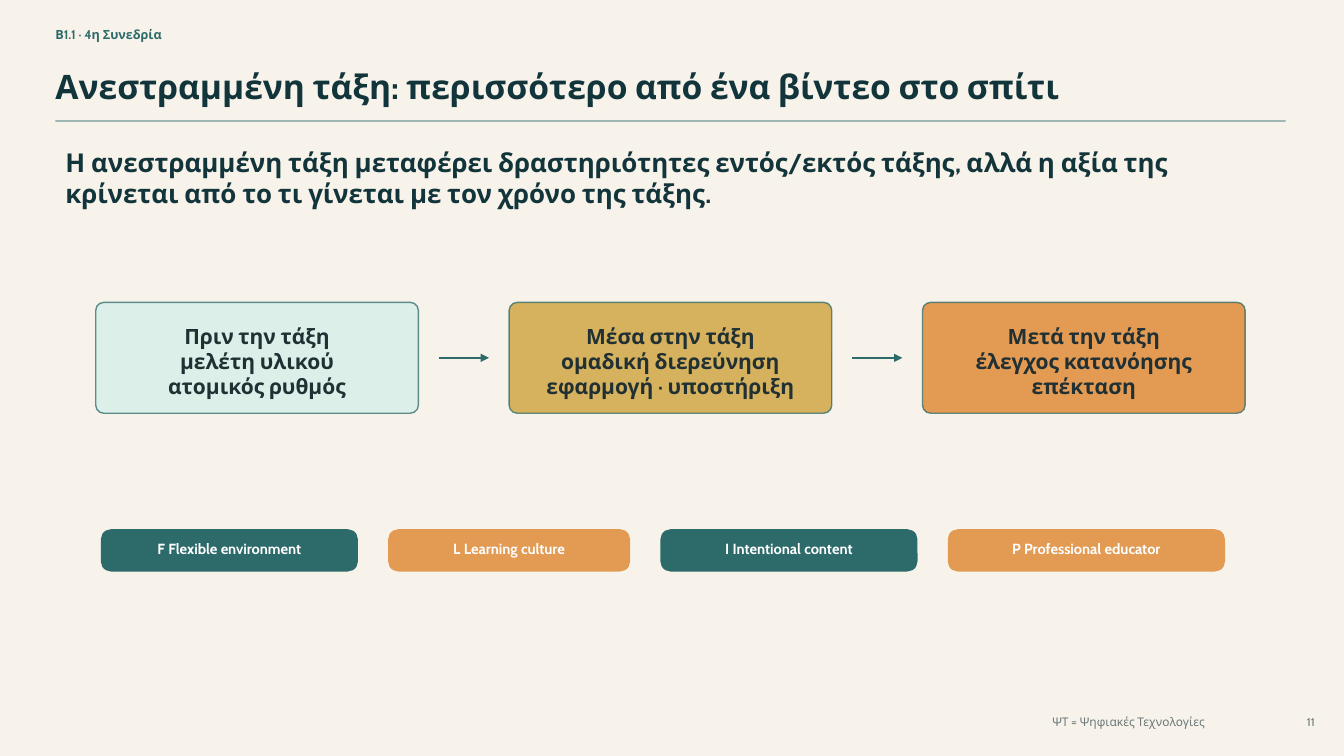
from lxml import etree
from pptx import Presentation
from pptx.dml.color import RGBColor
from pptx.enum.shapes import MSO_CONNECTOR, MSO_SHAPE
from pptx.enum.text import MSO_ANCHOR, MSO_AUTO_SIZE, PP_ALIGN
from pptx.oxml.ns import qn
from pptx.util import Inches, Pt

ROUNDED = MSO_SHAPE.ROUNDED_RECTANGLE
STRAIGHT = MSO_CONNECTOR.STRAIGHT
MIDDLE = MSO_ANCHOR.MIDDLE
NO_AUTOFIT = MSO_AUTO_SIZE.NONE
LEFT, CENTER, RIGHT = PP_ALIGN.LEFT, PP_ALIGN.CENTER, PP_ALIGN.RIGHT
TITLE_ONLY = 5

FONT = "Cabin"
COLORS = {
    "paper": "F7F3EA",
    "teal": "2D6A6A",
    "navy": "12343B",
    "ink": "203033",
    "gray": "6B7779",
    "mint": "DCEFE9",
    "gold": "D6B15E",
    "orange": "E39A53",
    "white": "FFFFFF",
}

HEADER_LEFT, HEADER_WIDTH = 0.55, 12.2

PHASES = [
    ("mint", ["Πριν την τάξη", "μελέτη υλικού", "ατομικός ρυθμός"]),
    ("gold", ["Μέσα στην τάξη", "ομαδική διερεύνηση", "εφαρμογή · υποστήριξη"]),
    ("orange", ["Μετά την τάξη", "έλεγχος κατανόησης", "επέκταση"]),
]
PHASE_LEFT, PHASE_TOP, PHASE_WIDTH, PHASE_HEIGHT = 0.95, 3, 3.2, 1.1
PHASE_GAP, ARROW_MARGIN = 0.9, 0.2

PILLARS = [
    ("teal", 2.55, "F Flexible environment"),
    ("orange", 2.4, "L Learning culture"),
    ("teal", 2.55, "I Intentional content"),
    ("orange", 2.75, "P Professional educator"),
]
PILLAR_LEFT, PILLAR_TOP, PILLAR_HEIGHT, PILLAR_GAP = 1, 5.25, 0.42, 0.3


def color(name):
    return RGBColor.from_string(COLORS[name])


def write(shape, lines, size, color_name, bold=True, align=LEFT, insets=(0, 0, 0, 0)):
    """Fill a shape with one paragraph per line; insets are left, top, right, bottom."""
    frame = shape.text_frame
    frame.word_wrap = True
    frame.auto_size = NO_AUTOFIT
    frame.vertical_anchor = MIDDLE
    (frame.margin_left, frame.margin_top,
     frame.margin_right, frame.margin_bottom) = map(Inches, insets)
    frame.text = "\n".join(lines)
    for paragraph in frame.paragraphs:
        paragraph.alignment = align
        paragraph.font.name = FONT
        paragraph.font.size = Pt(size)
        paragraph.font.bold = bold
        paragraph.font.color.rgb = color(color_name)


def add_text(slide, box, text, size, color_name, bold=True, align=LEFT):
    shape = slide.shapes.add_textbox(*map(Inches, box))
    write(shape, [text], size, color_name, bold, align)


def add_title(slide, box, text, size, color_name):
    title = slide.shapes.title
    title.left, title.top, title.width, title.height = map(Inches, box)
    write(title, [text], size, color_name)


def style_line(line, opacity=100):
    line.color.rgb = color("teal")
    line.width = Pt(1)
    if opacity < 100:
        rgb = line.fill._xPr.find(".//" + qn("a:srgbClr"))
        etree.SubElement(rgb, qn("a:alpha"), val=str(opacity * 1000))


def add_line(slide, left, right, y, opacity=100, arrow=False):
    connector = slide.shapes.add_connector(
        STRAIGHT, Inches(left), Inches(y), Inches(right), Inches(y))
    style_line(connector.line, opacity)
    if arrow:
        etree.SubElement(connector.line._get_or_add_ln(), qn("a:tailEnd"), type="triangle")
    etree.SubElement(connector._element.spPr, qn("a:effectLst"))


def add_rounded_box(slide, box, fill_name, outlined=False):
    """Add a box whose corner radius is the same at every size."""
    shape = slide.shapes.add_shape(ROUNDED, *map(Inches, box))
    shape.adjustments[0] = 0.08 / box[3] if outlined else 0.1 / box[3]
    shape.shadow.inherit = False
    shape.fill.solid()
    shape.fill.fore_color.rgb = color(fill_name)
    if outlined:
        style_line(shape.line, opacity=75)
    else:
        shape.line.fill.background()
    return shape


def add_phases(slide):
    for index, (fill_name, lines) in enumerate(PHASES):
        left = PHASE_LEFT + index * (PHASE_WIDTH + PHASE_GAP)
        box = (left, PHASE_TOP, PHASE_WIDTH, PHASE_HEIGHT)
        shape = add_rounded_box(slide, box, fill_name, outlined=True)
        write(shape, lines, 15, "ink", align=CENTER, insets=(0.12, 0.12, 0.12, 0.06))
        if index:
            add_line(slide, left - PHASE_GAP + ARROW_MARGIN, left - ARROW_MARGIN,
                     PHASE_TOP + PHASE_HEIGHT / 2, arrow=True)


def add_pillars(slide):
    left = PILLAR_LEFT
    for fill_name, width, label in PILLARS:
        shape = add_rounded_box(slide, (left, PILLAR_TOP, width, PILLAR_HEIGHT), fill_name)
        write(shape, [label], 10.5, "white", align=CENTER, insets=(0.09, 0, 0.09, 0.04))
        left += width + PILLAR_GAP


def main():
    presentation = Presentation()
    presentation.slide_width = Inches(13.33)
    presentation.slide_height = Inches(7.5)
    slide = presentation.slides.add_slide(presentation.slide_layouts[TITLE_ONLY])
    slide.background.fill.solid()
    slide.background.fill.fore_color.rgb = color("paper")

    add_text(slide, (HEADER_LEFT, 0.22, 3.6, 0.25), "Β1.1 · 4η Συνεδρία", 9, "teal")
    add_title(slide, (HEADER_LEFT, 0.58, HEADER_WIDTH, 0.55),
              "Ανεστραμμένη τάξη: περισσότερο από ένα βίντεο στο σπίτι", 24, "navy")
    add_line(slide, HEADER_LEFT, HEADER_LEFT + HEADER_WIDTH, 1.2, opacity=65)
    add_text(slide, (0.65, 1.45, 11.4, 0.62),
             "Η ανεστραμμένη τάξη μεταφέρει δραστηριότητες εντός/εκτός τάξης, αλλά η αξία της "
             "κρίνεται από το τι γίνεται με τον χρόνο της τάξης.", 18.5, "navy")
    add_phases(slide)
    add_pillars(slide)
    add_text(slide, (8.6, 7.05, 3.35, 0.22), "ΨΤ = Ψηφιακές Τεχνολογίες", 8.5, "gray",
             bold=False, align=RIGHT)
    add_text(slide, (12.82, 7.06, 0.22, 0.2), "11", 8, "gray", bold=False, align=RIGHT)

    presentation.save("out.pptx")


if __name__ == "__main__":
    main()
